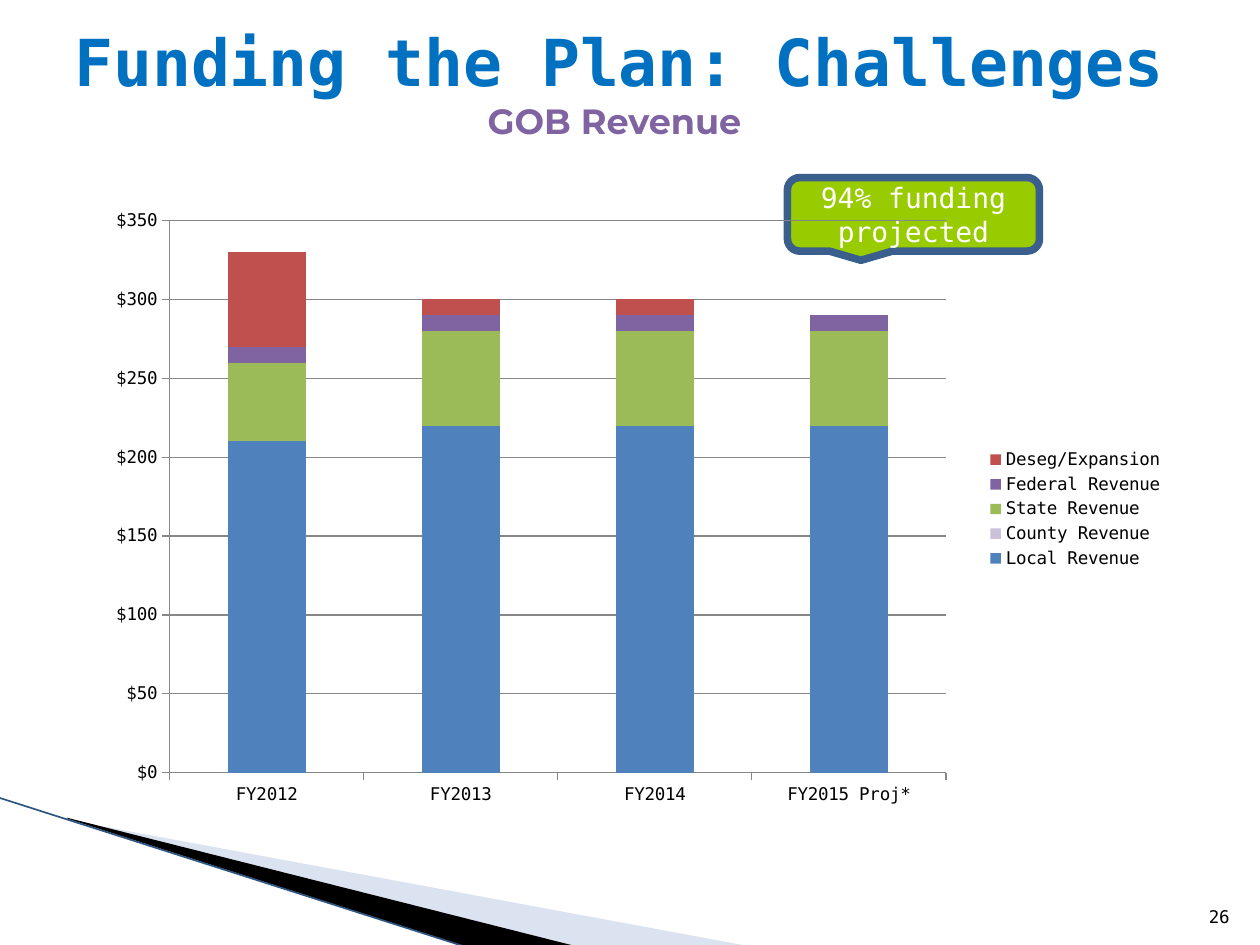
from dataclasses import dataclass

from lxml import etree
from pptx import Presentation
from pptx import util as u
from pptx.chart import data as chart_data
from pptx.dml import color
from pptx.enum import chart as chart_enum, shapes, text
from pptx.oxml import ns, parse_xml


@dataclass(frozen=True)
class Theme:
    mono: str = "DejaVu Sans Mono"
    display: str = "Montserrat"
    title_size: float = 37
    subtitle_size: float = 20
    callout_size: float = 16
    small_size: float = 10
    title: str = "0070C0"
    purple: str = "8064A2"
    black: str = "000000"
    white: str = "FFFFFF"
    lime: str = "99CC00"
    callout_line: str = "3A5F8C"
    swoosh: str = "A7B9DB"
    swoosh_line: str = "2F5580"
    grid: str = "878787"
    blue: str = "4F81BD"
    lilac: str = "CCC1DA"
    green: str = "9BBB59"
    red: str = "C0504D"


THEME = Theme()
CATEGORIES = ["FY2012", "FY2013", "FY2014", "FY2015 Proj*"]
REVENUE = [
    ("Local Revenue", [210, 220, 220, 220], THEME.blue),
    ("County Revenue", [0, 0, 0, 0], THEME.lilac),
    ("State Revenue", [50, 60, 60, 60], THEME.green),
    ("Federal Revenue", [10, 10, 10, 10], THEME.purple),
    ("Deseg/Expansion ", [60, 10, 10, None], THEME.red),
]


def points(*values):
    return [u.Pt(value) for value in values]


def apply(target, values):
    for name, value in values.items():
        setattr(target, name, value)


def set_fill(fill, hex_color):
    fill.solid()
    fill.fore_color.rgb = color.RGBColor.from_string(hex_color)


def set_line(line, hex_color, width):
    set_fill(line.fill, hex_color)
    line.width = u.Pt(width)


def set_font(font, size, hex_color, name=THEME.mono, bold=False):
    apply(font, {"name": name, "size": u.Pt(size), "bold": bold})
    font.color.rgb = color.RGBColor.from_string(hex_color)


def add_wedge(slide, corners, hex_color, opacity=None):
    start, *others = [points(*corner) for corner in corners]
    builder = slide.shapes.build_freeform(*start)
    builder.add_line_segments(others, close=True)
    shape = builder.convert_to_shape()
    shape.shadow.inherit = False
    set_fill(shape.fill, hex_color)
    shape.line.fill.background()
    if opacity is not None:
        fill_color = shape.fill._xPr.find(".//" + ns.qn("a:srgbClr"))
        etree.SubElement(fill_color, ns.qn("a:alpha"), val=str(opacity * 1000))


def add_edge(slide, start, end):
    connector = slide.shapes.add_connector(
        shapes.MSO_CONNECTOR.STRAIGHT, *points(*start, *end))
    set_line(connector.line, THEME.swoosh_line, 0.95)
    etree.SubElement(connector._element.spPr, ns.qn("a:effectLst"))


def set_title(slide, heading, subheading):
    title = slide.shapes.title
    apply(title, dict(zip(("left", "top", "width", "height"),
                          points(24, 21.6, 660, 50.4))))
    apply(title.text_frame, {"word_wrap": True,
                             "auto_size": text.MSO_AUTO_SIZE.NONE,
                             "vertical_anchor": text.MSO_ANCHOR.MIDDLE})
    paragraph = title.text_frame.paragraphs[0]
    paragraph.alignment = text.PP_ALIGN.CENTER
    run = paragraph.add_run()
    run.text = heading
    set_font(run.font, THEME.title_size, THEME.title, bold=True)
    paragraph.add_line_break()
    run = paragraph.add_run()
    run.text = subheading
    set_font(run.font, THEME.subtitle_size, THEME.purple, THEME.display, True)


def write(shape, words, size, hex_color, alignment, anchor):
    frame = shape.text_frame
    apply(frame, {"word_wrap": True, "vertical_anchor": anchor})
    paragraph = frame.paragraphs[0]
    paragraph.alignment = alignment
    run = paragraph.add_run()
    run.text = words
    set_font(run.font, size, hex_color)


def add_page_number(slide, number):
    box = slide.shapes.add_textbox(*points(681, 504.4, 28.8, 28.8))
    write(box, number, THEME.small_size, THEME.black,
          text.PP_ALIGN.RIGHT, text.MSO_ANCHOR.BOTTOM)


def add_callout(slide, words):
    shape = slide.shapes.add_shape(
        shapes.MSO_SHAPE.ROUNDED_RECTANGULAR_CALLOUT, *points(450, 101.5, 144, 42))
    shape.shadow.inherit = False
    set_fill(shape.fill, THEME.lime)
    set_line(shape.line, THEME.callout_line, 4.33)
    write(shape, words, THEME.callout_size, THEME.white,
          text.PP_ALIGN.CENTER, text.MSO_ANCHOR.MIDDLE)


def place_plot(chart, **box):
    plot_area = chart._chartSpace.chart.plotArea
    for old in plot_area.findall(ns.qn("c:layout")):
        plot_area.remove(old)
    sizes = "".join(f'<c:{name} val="{value}"/>' for name, value in box.items())
    plot_area.insert(0, parse_xml(
        f'<c:layout {ns.nsdecls("c")}><c:manualLayout>'
        '<c:layoutTarget val="inner"/><c:xMode val="edge"/><c:yMode val="edge"/>'
        f'{sizes}</c:manualLayout></c:layout>'))


def clear_background(chart):
    chart._chartSpace.chart.addnext(parse_xml(
        f'<c:spPr {ns.nsdecls("c", "a")}><a:noFill/>'
        '<a:ln><a:noFill/></a:ln></c:spPr>'))


def add_revenue_chart(slide):
    data = chart_data.CategoryChartData()
    data.categories = CATEGORIES
    for name, values, _ in REVENUE:
        data.add_series(name, values)
    chart = slide.shapes.add_chart(
        chart_enum.XL_CHART_TYPE.COLUMN_STACKED,
        *points(36, 101.5, 642, 378.7), data).chart
    clear_background(chart)
    set_font(chart.font, THEME.small_size, THEME.black)
    apply(chart, {"has_title": False, "has_legend": True})
    apply(chart.legend, {"position": chart_enum.XL_LEGEND_POSITION.RIGHT,
                         "include_in_layout": False})
    plot = chart.plots[0]
    apply(plot, {"gap_width": 150, "overlap": 100, "vary_by_categories": False})
    for series, (_, _, hex_color) in zip(plot.series, REVENUE):
        set_fill(series.format.fill, hex_color)
    for axis in (chart.category_axis, chart.value_axis):
        axis.major_tick_mark = chart_enum.XL_TICK_MARK.OUTSIDE
        set_line(axis.format.line, THEME.grid, 0.75)
    value_axis = chart.value_axis
    apply(value_axis, {"minimum_scale": 0, "maximum_scale": 350,
                       "major_unit": 50, "has_major_gridlines": True})
    set_line(value_axis.major_gridlines.format.line, THEME.grid, 0.75)
    apply(value_axis.tick_labels, {"number_format": '"$"#,##0',
                                   "number_format_is_linked": False})
    place_plot(chart, x=0.095, y=0.065, w=0.691, h=0.833)


def main():
    presentation = Presentation()
    apply(presentation, {"slide_width": u.Pt(720), "slide_height": u.Pt(540)})
    slide = presentation.slides.add_slide(presentation.slide_layouts[5])
    add_wedge(slide, [(39.6, 468.7), (428.4, 540.7), (328.3, 540.7), (39.6, 468)],
              THEME.swoosh, 40)
    add_wedge(slide, [(38.2, 467.3), (329, 540.7), (267.8, 541.4), (38.9, 468)],
              THEME.black)
    add_edge(slide, (-0.7, 455.8), (267.1, 541.4))
    set_title(slide, "Funding the Plan: Challenges", "GOB Revenue ")
    add_page_number(slide, "26")
    add_callout(slide, "94% funding projected")
    add_revenue_chart(slide)
    presentation.save("out.pptx")


if __name__ == "__main__":
    main()
